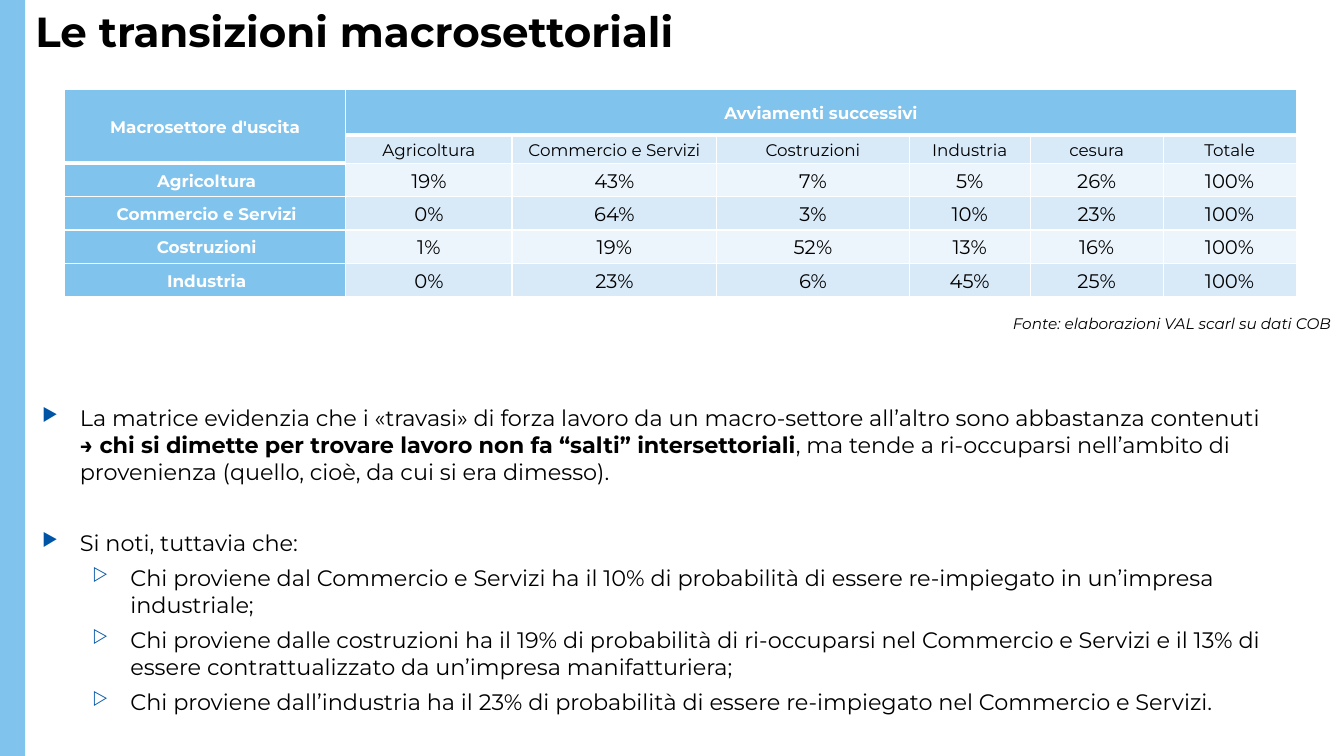
from lxml.etree import SubElement
from pptx import Presentation
from pptx.dml.color import RGBColor
from pptx.enum.shapes import MSO_SHAPE as Preset
from pptx.enum.text import MSO_ANCHOR as Anchor, MSO_AUTO_SIZE as AutoSize, PP_ALIGN as Align
from pptx.oxml import parse_xml
from pptx.oxml.ns import nsdecls, qn
from pptx.util import Pt

BLACK = RGBColor(0x00, 0x00, 0x00)
WHITE = RGBColor(0xFF, 0xFF, 0xFF)
SKY = RGBColor(0x80, 0xC3, 0xED)
PALE = RGBColor(0xD8, 0xE9, 0xF8)
PALEST = RGBColor(0xED, 0xF5, 0xFC)
BULLET_BLUE = RGBColor(0x00, 0x54, 0xA6)

DESTINATIONS = ["Agricoltura", "Commercio e Servizi", "Costruzioni", "Industria", "cesura", "Totale"]
TRANSITIONS = {
    "Agricoltura": [19, 43, 7, 5, 26, 100],
    "Commercio e Servizi": [0, 64, 3, 10, 23, 100],
    "Costruzioni": [1, 19, 52, 13, 16, 100],
    "Industria": [0, 23, 6, 45, 25, 100],
}
COLUMN_WIDTHS = [200.9, 118.8, 146.2, 137.5, 86.4, 95, 95]
ROW_HEIGHTS = [32.4, 20.2] + [23.8] * len(TRANSITIONS)

FINDINGS = [
    ("▶", 0, [
        ("La matrice evidenzia che i «travasi» di forza lavoro da un macro-settore all’altro "
         "sono abbastanza contenuti", False),
        ("\n", False),
        ("→ chi si dimette per trovare lavoro non fa “salti” intersettoriali", True),
        (", ma tende a ri-occuparsi nell’ambito di provenienza (quello, cioè, da cui si era dimesso).", False),
    ]),
    ("▶", 25.5, [("Si noti, tuttavia che:", False)]),
    ("▷", 0, [("Chi proviene dal Commercio e Servizi ha il 10% di probabilità di essere "
               "re-impiegato in un’impresa industriale;", False)]),
    ("▷", 0, [("Chi proviene dalle costruzioni ha il 19% di probabilità di ri-occuparsi nel "
               "Commercio e Servizi e il 13% di essere contrattualizzato da un’impresa manifatturiera;", False)]),
    ("▷", 0, [("Chi proviene dall’industria ha il 23% di probabilità di essere re-impiegato "
               "nel Commercio e Servizi.", False)]),
]
BULLET_INDENTS = {"▶": 27, "▷": 63}


class SlideBuilder:
    """Draws styled elements, measured in points, on the current slide."""

    font_name = "Montserrat"
    hanging = 27

    def __init__(self, slide):
        self.slide = slide

    def apply(self, target, values):
        for name, value in values.items():
            setattr(target, name, value)

    def add_text(self, paragraph, text, size, color=BLACK, **font_values):
        run = paragraph.add_run()
        run.text = text
        self.apply(run.font, {"name": self.font_name, "size": Pt(size), **font_values})
        run.font.color.rgb = color

    def line_break(self, paragraph, size):
        paragraph.add_line_break()
        SubElement(paragraph._p.findall(qn("a:br"))[-1], qn("a:rPr"), sz=str(size * 100))

    def band(self, left, top, width, height, color):
        band = self.slide.shapes.add_shape(Preset.RECTANGLE, Pt(left), Pt(top), Pt(width), Pt(height))
        band.shadow.inherit = False
        band.fill.solid()
        band.fill.fore_color.rgb = color
        band.line.fill.background()

    def title(self, text, left, top, width, height):
        heading = self.slide.shapes.title
        self.apply(heading, {"left": Pt(left), "top": Pt(top), "width": Pt(width), "height": Pt(height)})
        self.apply(heading.text_frame, {
            "vertical_anchor": Anchor.TOP, "word_wrap": True, "auto_size": AutoSize.NONE})
        paragraph = heading.text_frame.paragraphs[0]
        paragraph.alignment = Align.LEFT
        self.add_text(paragraph, text, 30, bold=True)

    def frame(self, left, top, width, height):
        frame = self.slide.shapes.add_textbox(Pt(left), Pt(top), Pt(width), Pt(height)).text_frame
        frame.word_wrap = True
        return frame

    def source_note(self, text, left, top, width, height):
        paragraph = self.frame(left, top, width, height).paragraphs[0]
        paragraph.line_spacing = 1.07
        self.add_text(paragraph, text, 10.9, italic=True)

    def bullet(self, paragraph, symbol):
        properties = paragraph._p.get_or_add_pPr()
        properties.set("marL", str(Pt(BULLET_INDENTS[symbol])))
        properties.set("indent", str(-Pt(self.hanging)))
        color = SubElement(properties, qn("a:buClr"))
        SubElement(color, qn("a:srgbClr"), val=str(BULLET_BLUE))
        SubElement(properties, qn("a:buSzPct"), val="80000")
        SubElement(properties, qn("a:buChar"), char=symbol)

    def bullets(self, items, left, top, width, height, size=16):
        frame = self.frame(left, top, width, height)
        for index, (symbol, gap, pieces) in enumerate(items):
            paragraph = frame.add_paragraph() if index else frame.paragraphs[0]
            self.bullet(paragraph, symbol)
            self.apply(paragraph, {"space_before": Pt(gap), "space_after": Pt(6)})
            for text, bold in pieces:
                if text == "\n":
                    self.line_break(paragraph, size)
                else:
                    self.add_text(paragraph, text, size, bold=bold)

    def cell(self, cell, text, fill, size=12, color=BLACK, bold=False, bottom=1, inset=0.72):
        self.apply(cell, {
            "vertical_anchor": Anchor.MIDDLE, "margin_left": Pt(inset), "margin_right": Pt(0.72),
            "margin_top": Pt(0.72), "margin_bottom": Pt(0)})
        cell.fill.solid()
        cell.fill.fore_color.rgb = fill
        edges = {"lnL": 1, "lnR": 1, "lnT": 1, "lnB": bottom}
        for index, (edge, weight) in enumerate(edges.items()):
            cell._tc.get_or_add_tcPr().insert(index, parse_xml(
                f'<a:{edge} {nsdecls("a")} w="{Pt(weight)}"><a:solidFill>'
                f'<a:srgbClr val="{WHITE}"/></a:solidFill></a:{edge}>'))
        paragraph = cell.text_frame.paragraphs[0]
        self.apply(paragraph, {"alignment": Align.CENTER, "line_spacing": 1.07, "space_after": Pt(8)})
        if text:
            self.add_text(paragraph, text, size, color, bold=bold)

    def transition_table(self, left, top):
        table = self.slide.shapes.add_table(
            len(ROW_HEIGHTS), len(COLUMN_WIDTHS), Pt(left), Pt(top),
            Pt(sum(COLUMN_WIDTHS)), Pt(sum(ROW_HEIGHTS))).table
        self.apply(table, {"first_row": False, "horz_banding": False})
        for column, width in zip(table.columns, COLUMN_WIDTHS):
            column.width = Pt(width)
        for row, height in zip(table.rows, ROW_HEIGHTS):
            row.height = Pt(height)
        heading = {"fill": SKY, "color": WHITE, "bold": True}
        top_row = ["Macrosettore d'uscita", "Avviamenti successivi"] + [""] * (len(DESTINATIONS) - 1)
        for index, text in enumerate(top_row):
            self.cell(table.cell(0, index), text, bottom=3, **heading)
        self.cell(table.cell(1, 0), "", bottom=3, **heading)
        for index, text in enumerate(DESTINATIONS, 1):
            self.cell(table.cell(1, index), text, PALE)
        for row, (sector, shares) in enumerate(TRANSITIONS.items(), 2):
            self.cell(table.cell(row, 0), sector, inset=2.88, **heading)
            for index, share in enumerate(shares, 1):
                self.cell(table.cell(row, index), f"{share}%", PALE if row % 2 else PALEST, size=14)
        table.cell(0, 0).merge(table.cell(1, 0))
        table.cell(0, 1).merge(table.cell(0, len(DESTINATIONS)))


def main():
    deck = Presentation()
    deck.slide_width, deck.slide_height = Pt(960), Pt(540)
    builder = SlideBuilder(deck.slides.add_slide(deck.slide_layouts[5]))
    builder.band(0, 0, 18, 540, SKY)
    builder.bullets(FINDINGS, 23, 285, 927.5, 242)
    builder.source_note("Fonte: elaborazioni VAL scarl su dati COB", 716.4, 220.3, 244, 21)
    builder.transition_table(46.1, 64.1)
    builder.title("Le transizioni macrosettoriali", 18, 0, 908, 44)
    deck.save("out.pptx")


if __name__ == "__main__":
    main()
